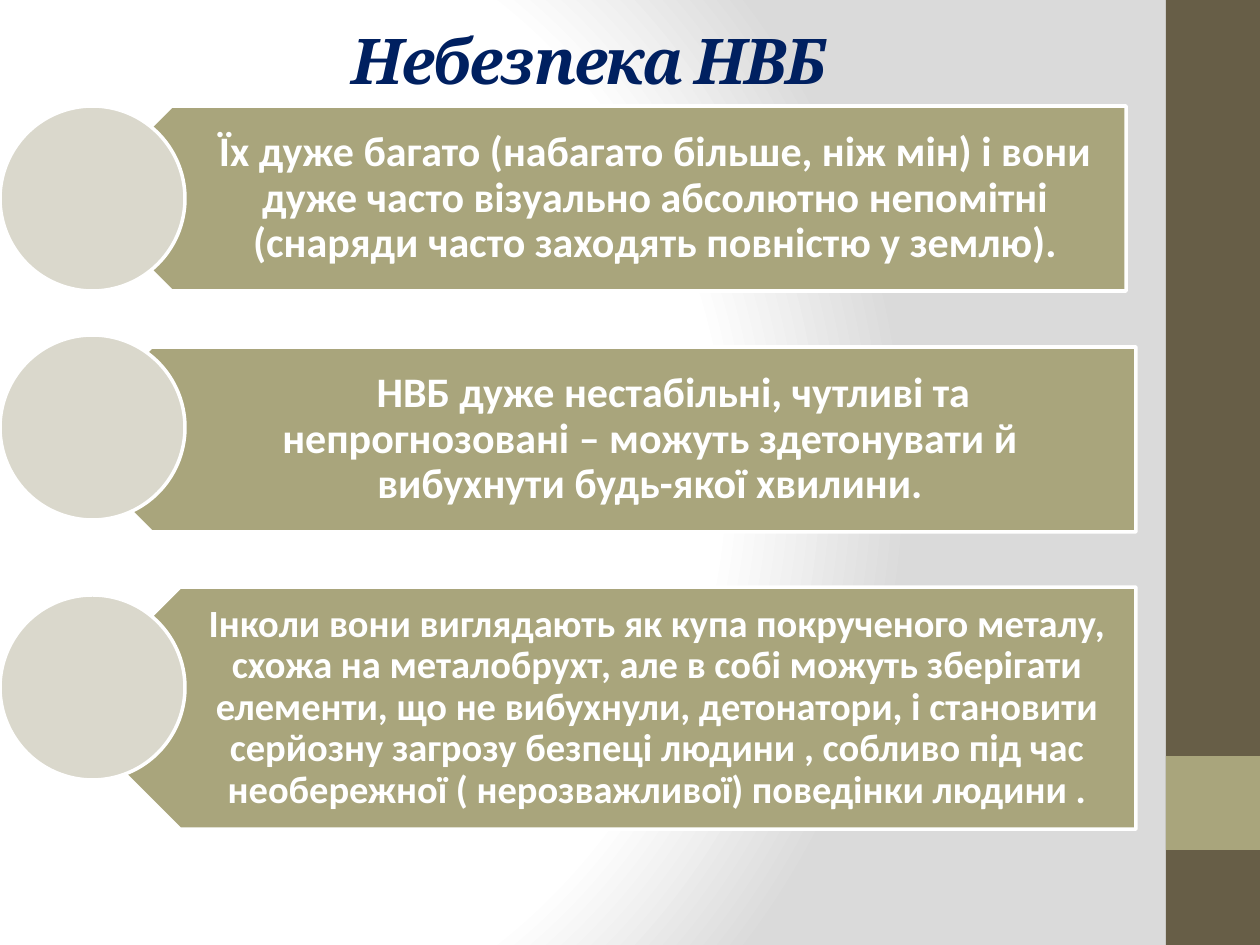
import pptx
import pptx.dml.color
import pptx.enum.shapes
import pptx.enum.text
import pptx.oxml
import pptx.oxml.ns
import pptx.util

EMU_PER_PX = 914400 / 126
SLIDE_WIDTH, SLIDE_HEIGHT = 1260, 945
CIRCLE_SIZE = 185
COLORS = {
    "white": "FFFFFF",
    "haze": "DADADA",
    "sidebar": "675E47",
    "olive": "A9A57C",
    "circle": "DAD8CC",
    "title": "002060",
}
SHAPES = pptx.enum.shapes.MSO_SHAPE
DANGERS = [
    {"left": 79, "top": 106, "right": 1126, "height": 185, "circle_top": 106,
     "size": 24, "indent": 0,
     "text": "Їх дуже багато (набагато більше, ніж мін) і вони дуже часто "
             "візуально абсолютно непомітні (снаряди часто заходять повністю "
             "у землю)."},
    {"left": 59, "top": 347, "right": 1136, "height": 185, "circle_top": 335,
     "size": 24, "indent": 47,
     "text": "НВБ дуже нестабільні, чутливі та непрогнозовані – можуть "
             "здетонувати й вибухнути будь-якої хвилини."},
    {"left": 59, "top": 587, "right": 1136, "height": 242, "circle_top": 595,
     "size": 22, "indent": 0,
     "text": "Інколи вони виглядають як купа покрученого металу, схожа на "
             "металобрухт, але в собі можуть зберігати елементи, що не "
             "вибухнули, детонатори, і становити серйозну загрозу безпеці "
             "людини , собливо під час необережної ( нерозважливої) "
             "поведінки людини ."},
]


def px(length):
    """Turn whole pixels into EMU."""
    return pptx.util.Emu(round(length * EMU_PER_PX))


def rgb(name):
    """Look up a colour by its name."""
    return pptx.dml.color.RGBColor.from_string(COLORS[name])


def paint_background(slide):
    """Fill the background with a radial haze that darkens to the right."""
    slide.background.fill.gradient()
    old_gradient = slide.background._cSld.find(".//" + pptx.oxml.ns.qn("a:gradFill"))
    stops = "".join(
        f'<a:gs pos="{position * 1000}"><a:srgbClr val="{COLORS[name]}"/></a:gs>'
        for position, name in [(0, "white"), (75, "white"), (100, "haze")]
    )
    haze = pptx.oxml.parse_xml(
        f'<a:gradFill {pptx.oxml.ns.nsdecls("a")} rotWithShape="1">'
        f'<a:gsLst>{stops}</a:gsLst><a:path path="circle">'
        '<a:fillToRect l="20000" t="50000" r="100000" b="50000"/>'
        '</a:path></a:gradFill>'
    )
    old_gradient.getparent().replace(old_gradient, haze)


def add_figure(slide, kind, box, fill, outlined=False):
    """Add a flat preset shape, with a white outline if wanted."""
    figure = slide.shapes.add_shape(kind, *map(px, box))
    figure.shadow.inherit = False
    figure.fill.solid()
    figure.fill.fore_color.rgb = rgb(fill)
    if outlined:
        figure.line.color.rgb = rgb("white")
        figure.line.width = pptx.util.Pt(2)
    else:
        figure.line.fill.background()
    return figure


def add_label(slide, box, text, font, size, color, insets):
    """Add a centred bold text box and return its paragraph and run."""
    frame = slide.shapes.add_textbox(*map(px, box)).text_frame
    frame.word_wrap = True
    frame.vertical_anchor = pptx.enum.text.MSO_ANCHOR.MIDDLE
    (frame.margin_left, frame.margin_top,
     frame.margin_right, frame.margin_bottom) = map(px, insets)
    paragraph = frame.paragraphs[0]
    paragraph.alignment = pptx.enum.text.PP_ALIGN.CENTER
    run = paragraph.add_run()
    run.text = text
    run.font.name = font
    run.font.size = pptx.util.Pt(size)
    run.font.bold = True
    run.font.color.rgb = rgb(color)
    return paragraph, run


def add_title(slide):
    """Add the slightly condensed italic heading."""
    _, heading = add_label(slide, (64, 16, 1050, 87), "Небезпека НВБ",
                           "Cambria", 36, "title", (12, 6, 12, 6))
    heading.font.italic = True
    heading.font._element.set("spc", "-100")


def add_danger(slide, danger):
    """Add one arrow band with its text and circle."""
    left, top, height = danger["left"], danger["top"], danger["height"]
    band = add_figure(slide, SHAPES.PENTAGON,
                      (left, top, danger["right"] - left, height), "olive", True)
    band.rotation = 180
    text_left = left + height // 4
    paragraph, _ = add_label(
        slide, (text_left, top, danger["right"] - text_left, height),
        danger["text"], "Calibri", danger["size"], "white", (82, 12, 23, 12))
    paragraph.line_spacing = 0.9
    if danger["indent"]:
        paragraph._p.get_or_add_pPr().set("indent", str(px(danger["indent"])))
    add_figure(slide, SHAPES.OVAL,
               (0, danger["circle_top"], CIRCLE_SIZE, CIRCLE_SIZE), "circle", True)


def main():
    """Build and save the slide."""
    deck = pptx.Presentation()
    deck.slide_width, deck.slide_height = px(SLIDE_WIDTH), px(SLIDE_HEIGHT)
    slide = deck.slides.add_slide(deck.slide_layouts[6])
    paint_background(slide)
    add_figure(slide, SHAPES.RECTANGLE, (1166, 0, 94, SLIDE_HEIGHT), "sidebar")
    add_figure(slide, SHAPES.RECTANGLE, (1166, 756, 94, 94), "olive")
    add_title(slide)
    for danger in DANGERS:
        add_danger(slide, danger)
    deck.save("out.pptx")


if __name__ == "__main__":
    main()
